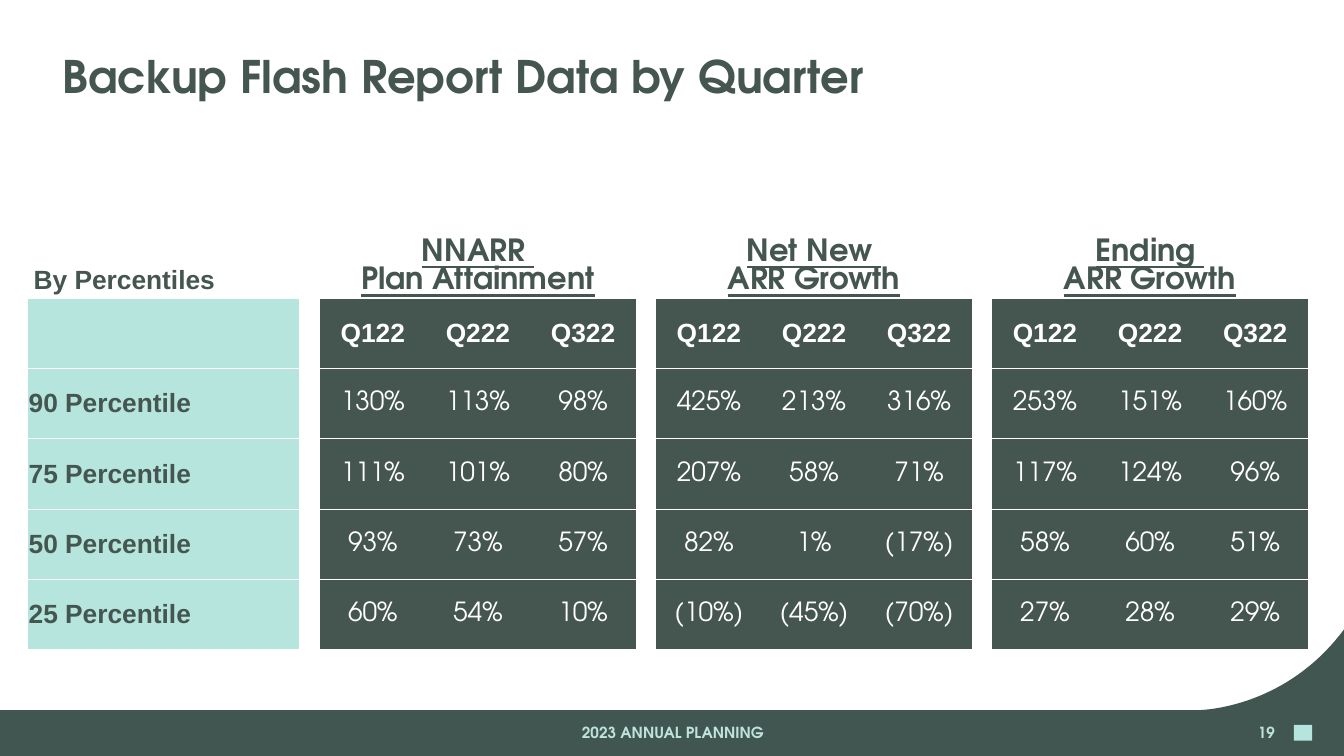
from lxml import etree
from pptx import Presentation
from pptx import util as u
from pptx.dml import color
from pptx.enum import shapes, text
from pptx.oxml import ns

WIDTH, HEIGHT = 21.99, 12.37
DISPLAY, BODY = "TeX Gyre Adventor", "Arial"
SLATE, BAND, MINT, PALE, WHITE = "455550", "415651", "B5E5DC", "BFE3DC", "FFFFFF"
LEFT, CENTER, RIGHT = text.PP_ALIGN.LEFT, text.PP_ALIGN.CENTER, text.PP_ALIGN.RIGHT
MIDDLE, BOTTOM = text.MSO_ANCHOR.MIDDLE, text.MSO_ANCHOR.BOTTOM
NO_STYLE = "{2D5ABB26-0587-4C30-8999-92F81FD0307C}"

# Table grid: a label column, then a gap and three quarters for each measure
LABEL_COL, GAP_COL, QUARTER_COL = 4.45, 0.34, 1.72
HEADING_ROW, DATA_ROW = 1.31, 1.15
QUARTERS = ["Q122", "Q222", "Q322"]
MEASURES = [["NNARR ", "Plan Attainment"], ["Net New ", "ARR Growth"],
            ["Ending ", "ARR Growth"]]
PERCENTILES = {
    "90 Percentile": ["130%", "113%", "98%", "425%", "213%", "316%", "253%", "151%", "160%"],
    "75 Percentile": ["111%", "101%", "80%", "207%", "58%", "71%", "117%", "124%", "96%"],
    "50 Percentile": ["93%", "73%", "57%", "82%", "1%", "(17%)", "58%", "60%", "51%"],
    "25 Percentile": ["60%", "54%", "10%", "(10%)", "(45%)", "(70%)", "27%", "28%", "29%"],
}


def rgb(hex_color):
    return color.RGBColor.from_string(hex_color)


def inches(*lengths):
    return [u.Inches(length) for length in lengths]


def write(frame, lines, size, font, hex_color, align=LEFT, bold=True, underline=False):
    for index, line in enumerate(lines):
        paragraph = frame.add_paragraph() if index else frame.paragraphs[0]
        paragraph.alignment = align
        run = paragraph.add_run()
        run.text = line
        run.font.size, run.font.name = u.Pt(size), font
        run.font.bold, run.font.underline = bold, underline
        run.font.color.rgb = rgb(hex_color)


def paint(shape, hex_color):
    shape.shadow.inherit = False
    shape.fill.solid()
    shape.fill.fore_color.rgb = rgb(hex_color)
    shape.line.fill.background()


def add_title(slide, wording):
    title = slide.shapes.title
    title.left, title.top, title.width, title.height = inches(1.02, 0.82, 19.94, 0.94)
    frame = title.text_frame
    frame.auto_size = text.MSO_AUTO_SIZE.NONE
    frame.vertical_anchor, frame.margin_left = MIDDLE, 0
    write(frame, [wording], 52.8, DISPLAY, SLATE)
    frame.paragraphs[0].line_spacing = 0.9


def add_footer_text(slide, wording, left, width, align):
    frame = slide.shapes.add_textbox(*inches(left, 11.66, width, 0.66)).text_frame
    frame.word_wrap, frame.vertical_anchor = True, MIDDLE
    write(frame, [wording], 18, DISPLAY, PALE, align)


def add_footer_band(slide):
    # The right end rises along a cubic curve
    curve = [(19.59, 11.62), (19.59, 11.62), (21, 11.63), (WIDTH, 10.3)]
    steps = 40
    rise = []
    for step in range(steps + 1):
        t = step / steps
        weights = [(1 - t) ** 3, 3 * t * (1 - t) ** 2, 3 * t ** 2 * (1 - t), t ** 3]
        rise.append([sum(w * point[axis] for w, point in zip(weights, curve))
                     for axis in (0, 1)])
    corners = [(0, 11.62), *rise, (WIDTH, HEIGHT)]
    outline = slide.shapes.build_freeform(*inches(0, HEIGHT))
    outline.add_line_segments([inches(*corner) for corner in corners], close=True)
    paint(outline.convert_to_shape(), BAND)


def add_emblem(slide):
    emblem = slide.shapes.add_shape(shapes.MSO_SHAPE.RECTANGLE, *inches(21.17, 11.86, 0.3, 0.26))
    paint(emblem, MINT)


def rule_cell(cell):
    for edge in ("a:lnT", "a:lnB"):
        line = etree.SubElement(cell._tc.get_or_add_tcPr(), ns.qn(edge), w=str(u.Pt(1)))
        solid = etree.SubElement(line, ns.qn("a:solidFill"))
        etree.SubElement(solid, ns.qn("a:srgbClr"), val=WHITE)


def format_cell(cell, fill, anchor=MIDDLE, side=0.02, edge=0.02):
    rule_cell(cell)
    cell.fill.solid()
    cell.fill.fore_color.rgb = rgb(fill)
    cell.vertical_anchor = anchor
    cell.margin_left = cell.margin_right = u.Inches(side)
    cell.margin_top = cell.margin_bottom = u.Inches(edge)


def add_percentile_table(slide):
    widths = [LABEL_COL] + ([GAP_COL] + [QUARTER_COL] * 3) * len(MEASURES)
    heights = [HEADING_ROW] + [DATA_ROW] * (len(PERCENTILES) + 1)
    frame = slide.shapes.add_table(len(heights), len(widths),
                                   *inches(0.45, 3.57, sum(widths), sum(heights)))
    table = frame.table
    table.first_row = table.horz_banding = False
    table._tbl.tblPr.find(ns.qn("a:tableStyleId")).text = NO_STYLE
    for column, width in zip(table.columns, widths):
        column.width = u.Inches(width)
    for row, height in zip(table.rows, heights):
        row.height = u.Inches(height)

    # Fills and margins
    gaps = range(1, len(widths), 4)
    quarter_columns = [c for c in range(1, len(widths)) if c not in gaps]
    for r in range(len(heights)):
        for c in range(len(widths)):
            if r == 0:
                format_cell(table.cell(r, c), WHITE, BOTTOM, 0.1, 0.05)
            else:
                fill = MINT if c == 0 else WHITE if c in gaps else SLATE
                format_cell(table.cell(r, c), fill, edge=0.01 if r == 1 else 0.02)

    # Headings
    write(table.cell(0, 0).text_frame, ["By Percentiles"], 31, BODY, SLATE)
    for gap, measure in zip(gaps, MEASURES):
        heading = table.cell(0, gap + 1)
        heading.merge(table.cell(0, gap + 3))
        write(heading.text_frame, measure, 36, DISPLAY, SLATE, CENTER, underline=True)
    for c, quarter in zip(quarter_columns, QUARTERS * len(MEASURES)):
        write(table.cell(1, c).text_frame, [quarter], 31, BODY, WHITE, CENTER)

    # Values
    for r, (percentile, values) in enumerate(PERCENTILES.items(), start=2):
        write(table.cell(r, 0).text_frame, [percentile], 31, BODY, SLATE)
        for c, value in zip(quarter_columns, values):
            write(table.cell(r, c).text_frame, [value], 31, DISPLAY, WHITE, CENTER, bold=False)


def main():
    deck = Presentation()
    deck.slide_width, deck.slide_height = inches(WIDTH, HEIGHT)
    slide = deck.slides.add_slide(deck.slide_layouts[5])
    add_footer_band(slide)
    add_emblem(slide)
    add_title(slide, "Backup Flash Report Data by Quarter")
    add_footer_text(slide, "19", 16.01, 4.95, RIGHT)
    add_percentile_table(slide)
    add_footer_text(slide, "2023 ANNUAL PLANNING", 7.3, 7.42, CENTER)
    deck.save("out.pptx")


if __name__ == "__main__":
    main()
